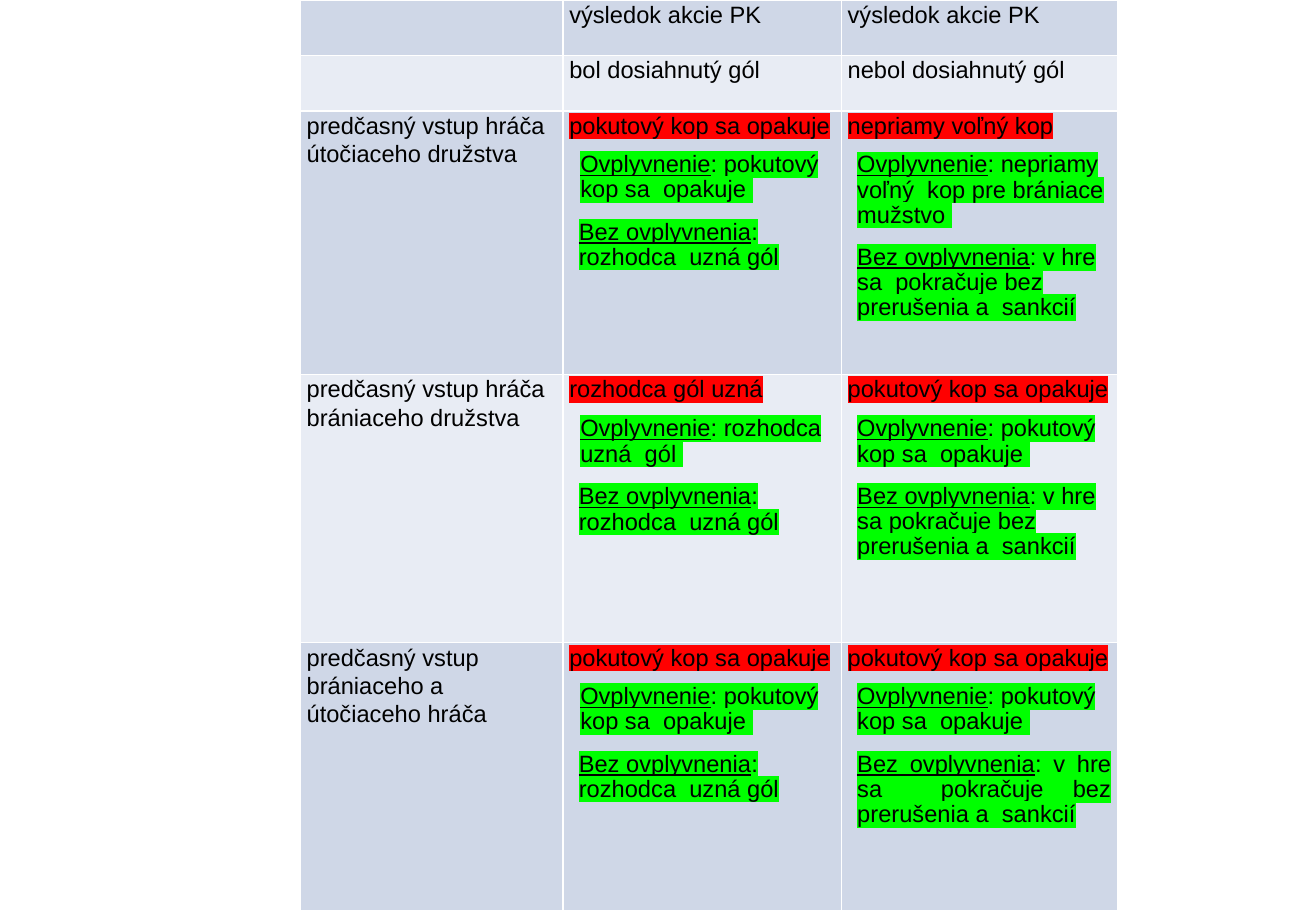
from dataclasses import dataclass
from typing import Optional

from lxml import etree
from pptx import Presentation, util as u
from pptx.dml import color
from pptx.enum import text
from pptx.oxml import ns

COLORS = {
    "ink": "000000",
    "grid": "FFFFFF",
    "dark_band": "CFD7E7",
    "light_band": "E8ECF4",
    "verdict": "FF0000",
    "detail": "00FF00",
}
COLUMN_WIDTHS = (5.49, 5.82, 5.77)
ROW_HEIGHTS = (1.16, 1.16, 5.51, 5.61, 5.6)
REPEAT = "pokutový kop sa opakuje"
REPEAT_DETAIL = "pokutový kop sa  opakuje"
GOAL_DETAIL = "rozhodca  uzná gól"
PLAY_ON = "v hre sa  pokračuje bez prerušenia a  sankcií"


@dataclass(frozen=True)
class Outcome:
    verdict: str
    influenced: str
    uninfluenced: str
    influenced_indent: float = 0.2
    influenced_spacing: float = 0.94
    uninfluenced_spacing: float = 0.95
    gap: float = 0.5
    justified: bool = False


@dataclass(frozen=True)
class Offence:
    player: str
    goal: Outcome
    no_goal: Outcome


REPEAT_OR_GOAL = Outcome(REPEAT, REPEAT_DETAIL, GOAL_DETAIL, 0.23, 0.94, 0.94)
HEADINGS = (
    ("výsledok akcie PK", "výsledok akcie PK", None),
    ("bol dosiahnutý gól", "nebol dosiahnutý gól", text.PP_ALIGN.JUSTIFY),
)
OFFENCES = (
    Offence(
        "predčasný vstup hráča útočiaceho družstva",
        REPEAT_OR_GOAL,
        Outcome("nepriamy voľný kop", "nepriamy voľný  kop pre brániace mužstvo",
                PLAY_ON, influenced_spacing=0.95, gap=0),
    ),
    Offence(
        "predčasný vstup hráča brániaceho družstva",
        Outcome("rozhodca gól uzná", "rozhodca uzná  gól", GOAL_DETAIL, 0.23, 0.96, 0.96, 0.1),
        Outcome(REPEAT, REPEAT_DETAIL, "v hre sa pokračuje bez prerušenia a  sankcií",
                influenced_spacing=0.96, gap=0.1),
    ),
    Offence(
        "predčasný vstup brániaceho a útočiaceho hráča",
        REPEAT_OR_GOAL,
        Outcome(REPEAT, REPEAT_DETAIL, PLAY_ON, justified=True),
    ),
)


def add_color(parent, tag: str, name: str):
    holder = etree.SubElement(parent, ns.qn(tag))
    etree.SubElement(holder, ns.qn("a:srgbClr"), val=COLORS[name])
    return holder


def write(paragraph, words: str, *, highlight: Optional[str] = None,
          underline: Optional[bool] = None) -> None:
    run = paragraph.add_run()
    run.text = words
    font = run.font
    font.size = u.Pt(14)
    font.underline = underline
    font.color.rgb = color.RGBColor.from_string(COLORS["ink"])
    if highlight:
        add_color(font._element, "a:highlight", highlight)
    font.name = "Arial"


def set_paragraph(paragraph, *, spacing: float = 1.07, before: float = 0, after: float = 8,
                  indent: float = 0, align: Optional[text.PP_ALIGN] = None) -> None:
    paragraph.line_spacing = spacing
    paragraph.space_before = u.Pt(before)
    paragraph.space_after = u.Pt(after)
    paragraph.alignment = align
    if indent:
        properties = paragraph._p.get_or_add_pPr()
        properties.set("marL", str(u.Cm(indent)))
        properties.set("indent", "0")


def style_cell(cell, band: str) -> None:
    cell.margin_left = cell.margin_right = u.Cm(0.13)
    cell.margin_top = cell.margin_bottom = 0
    cell.fill.solid()
    cell.fill.fore_color.rgb = color.RGBColor.from_string(COLORS[band])
    properties = cell._tc.get_or_add_tcPr()
    for position, side in enumerate(("a:lnL", "a:lnR", "a:lnT", "a:lnB")):
        border = etree.Element(ns.qn(side), w=str(u.Pt(1)))
        add_color(border, "a:solidFill", "grid")
        properties.insert(position, border)


def fill_label(cell, words: str, *, after: float = 8,
               align: Optional[text.PP_ALIGN] = None) -> None:
    paragraph = cell.text_frame.paragraphs[0]
    set_paragraph(paragraph, after=after, align=align)
    write(paragraph, words)


def fill_outcome(cell, outcome: Outcome) -> None:
    verdict = cell.text_frame.paragraphs[0]
    set_paragraph(verdict)
    write(verdict, outcome.verdict, highlight="verdict")

    influenced = cell.text_frame.add_paragraph()
    set_paragraph(influenced, spacing=outcome.influenced_spacing, after=10,
                  indent=outcome.influenced_indent)
    write(influenced, "Ovplyvnenie", highlight="detail", underline=True)
    write(influenced, f": {outcome.influenced} ", highlight="detail")

    uninfluenced = cell.text_frame.add_paragraph()
    set_paragraph(uninfluenced, spacing=outcome.uninfluenced_spacing, before=outcome.gap,
                  after=10, indent=0.2,
                  align=text.PP_ALIGN.JUSTIFY if outcome.justified else None)
    write(uninfluenced, "Bez ovplyvnenia", highlight="detail", underline=True)
    write(uninfluenced, f": {outcome.uninfluenced}", highlight="detail")


def main() -> None:
    deck = Presentation()
    deck.slide_width, deck.slide_height = u.Cm(27.51), u.Cm(19.05)
    slide = deck.slides.add_slide(deck.slide_layouts[6])
    penalties = slide.shapes.add_table(
        len(ROW_HEIGHTS), len(COLUMN_WIDTHS), u.Cm(6.28), 0,
        u.Cm(sum(COLUMN_WIDTHS)), u.Cm(sum(ROW_HEIGHTS))).table
    penalties.first_row = penalties.horz_banding = False
    for column, width in zip(penalties.columns, COLUMN_WIDTHS):
        column.width = u.Cm(width)
    for index, (row, height) in enumerate(zip(penalties.rows, ROW_HEIGHTS)):
        row.height = u.Cm(height)
        for cell in row.cells:
            style_cell(cell, "light_band" if index % 2 else "dark_band")

    for index, (goal, no_goal, align) in enumerate(HEADINGS):
        fill_label(penalties.cell(index, 1), goal, after=10, align=align)
        fill_label(penalties.cell(index, 2), no_goal, align=align)
    for index, offence in enumerate(OFFENCES, start=len(HEADINGS)):
        fill_label(penalties.cell(index, 0), offence.player)
        fill_outcome(penalties.cell(index, 1), offence.goal)
        fill_outcome(penalties.cell(index, 2), offence.no_goal)
    deck.save("out.pptx")


if __name__ == "__main__":
    main()
